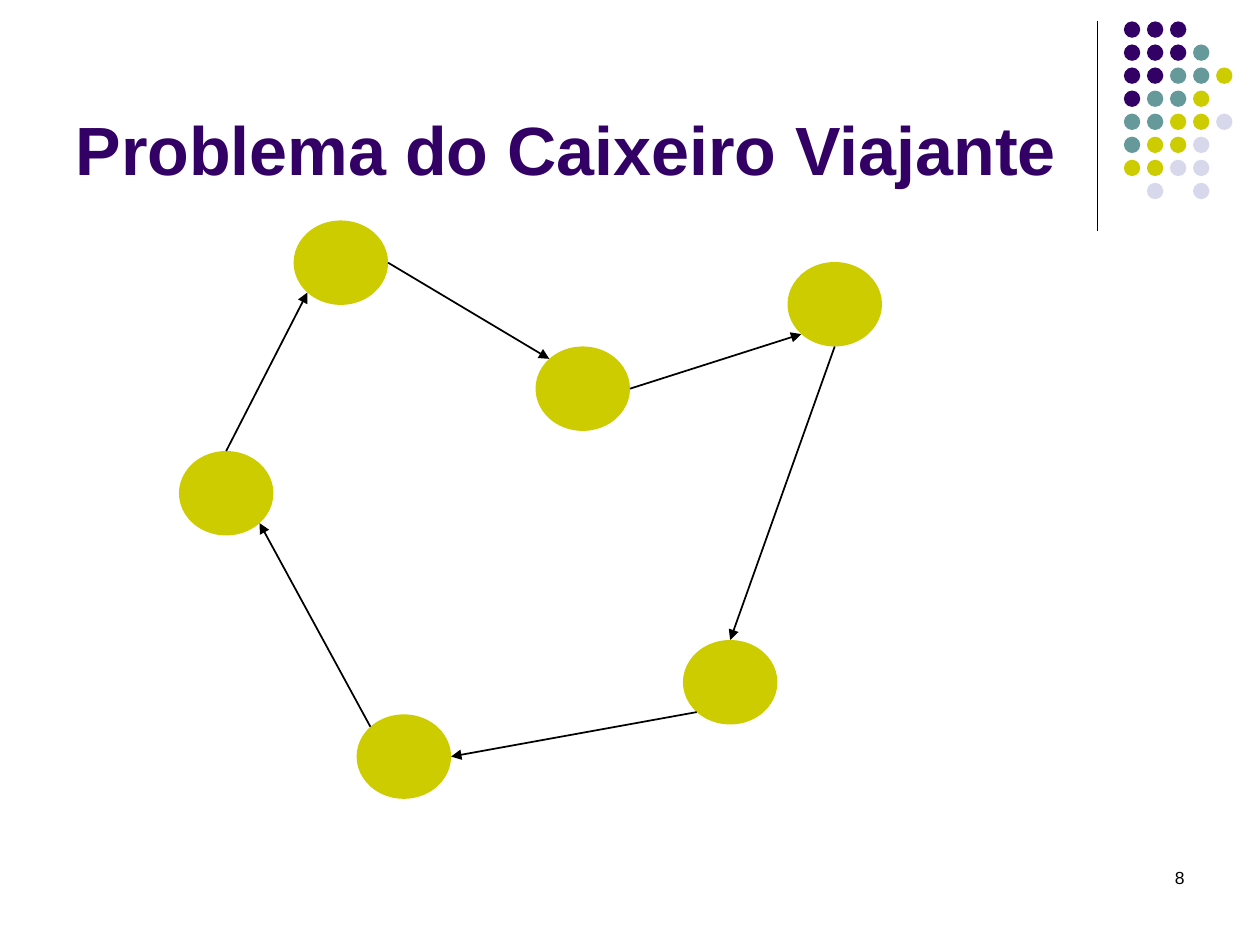
"""Build the travelling salesman slide: a closed tour through six cities."""
from math import hypot

from lxml.etree import SubElement
from pptx import Presentation
from pptx.dml.color import RGBColor
from pptx.enum.shapes import MSO_CONNECTOR, MSO_SHAPE
from pptx.enum.text import MSO_ANCHOR, MSO_AUTO_SIZE, PP_ALIGN
from pptx.oxml.ns import qn
from pptx.util import Inches, Pt

COLORS = {
    "ink": "000000",
    "plum": "330066",
    "teal": "669999",
    "lime": "CCCC00",
    "mist": "D8D8EC",
}
FONT = "Arial"
CITY = (0.75, 0.67)
DOT = 0.13
PITCH = 0.183
DOTS = ("PPP", "PPPT", "PPTTL", "PTTL", "TTLLM", "TLLM", "LLMM", " M M")
TONES = {"P": "plum", "T": "teal", "L": "lime", "M": "mist"}
CITIES = {
    "west": (1.42, 3.58),
    "north": (2.33, 1.75),
    "centre": (4.25, 2.75),
    "east": (6.25, 2.08),
    "south": (5.42, 5.08),
    "base": (2.83, 5.67),
}
SIDES = {
    "top": (0, -1), "bottom": (0, 1), "right": (1, 0),
    "top left": (-1, -1), "bottom left": (-1, 1), "bottom right": (1, 1),
}
TOUR = (
    ("west", "top", "north", "bottom left"),
    ("north", "right", "centre", "top left"),
    ("centre", "right", "east", "bottom left"),
    ("east", "bottom", "south", "top"),
    ("south", "bottom left", "base", "right"),
    ("base", "top left", "west", "bottom right"),
)


def tint(name):
    return RGBColor.from_string(COLORS[name])


def write(frame, text, size=10, color="ink", bold=False, align=PP_ALIGN.LEFT,
          anchor=MSO_ANCHOR.TOP):
    frame.word_wrap = True
    frame.auto_size = MSO_AUTO_SIZE.NONE
    frame.vertical_anchor = anchor
    par = frame.paragraphs[0]
    par.alignment = align
    run = par.add_run()
    run.text = text
    run.font.name = FONT
    run.font.size = Pt(size)
    run.font.bold = bold
    run.font.color.rgb = tint(color)


def rim(city, side):
    left, top = CITIES[city]
    wide, high = CITY
    dx, dy = SIDES[side]
    reach = 2 * hypot(dx, dy)
    return left + wide / 2 + wide * dx / reach, top + high / 2 + high * dy / reach


class Board:
    """Hold the style and the slide being drawn."""

    def __init__(self, deck):
        self.slide = deck.slides.add_slide(deck.slide_layouts[5])
        self.shapes = self.slide.shapes

    def title(self, text, left, top, wide, high):
        box = self.shapes.title
        box.left, box.top = Inches(left), Inches(top)
        box.width, box.height = Inches(wide), Inches(high)
        write(box.text_frame, text, size=39, color="plum", bold=True,
              anchor=MSO_ANCHOR.BOTTOM)

    def label(self, text, left, top, wide, high, **style):
        box = self.shapes.add_textbox(Inches(left), Inches(top),
                                      Inches(wide), Inches(high))
        write(box.text_frame, text, **style)

    def oval(self, left, top, wide, high, color):
        shape = self.shapes.add_shape(MSO_SHAPE.OVAL, Inches(left), Inches(top),
                                      Inches(wide), Inches(high))
        shape.shadow.inherit = False
        shape.fill.solid()
        shape.fill.fore_color.rgb = tint(color)
        shape.line.fill.background()

    def line(self, start, end, width=1, arrow=False):
        link = self.shapes.add_connector(
            MSO_CONNECTOR.STRAIGHT, *(Inches(n) for n in (*start, *end)))
        link.line.color.rgb = tint("ink")
        link.line.width = Pt(width)
        props = link._element.spPr
        if arrow:
            SubElement(props.find(qn("a:ln")), qn("a:tailEnd"), type="triangle")
        SubElement(props, qn("a:effectLst"))


def main():
    deck = Presentation()
    deck.slide_width, deck.slide_height = Inches(10), Inches(7.5)
    board = Board(deck)
    board.line((8.71, 0.17), (8.71, 1.83), width=0.75)
    for row, codes in enumerate(DOTS):
        for col, code in enumerate(codes):
            if code in TONES:
                board.oval(8.92 + col * PITCH, 0.17 + row * PITCH,
                           DOT, DOT, TONES[code])
    board.label("8", 7.17, 6.83, 2.33, 0.5, align=PP_ALIGN.RIGHT)
    board.title("Problema do Caixeiro Viajante", 0.5, 0.13, 8.25, 1.42)
    for place in CITIES.values():
        board.oval(*place, *CITY, "lime")
    for origin, leave, target, enter in TOUR:
        board.line(rim(origin, leave), rim(target, enter), arrow=True)
    deck.save("out.pptx")


if __name__ == "__main__":
    main()
